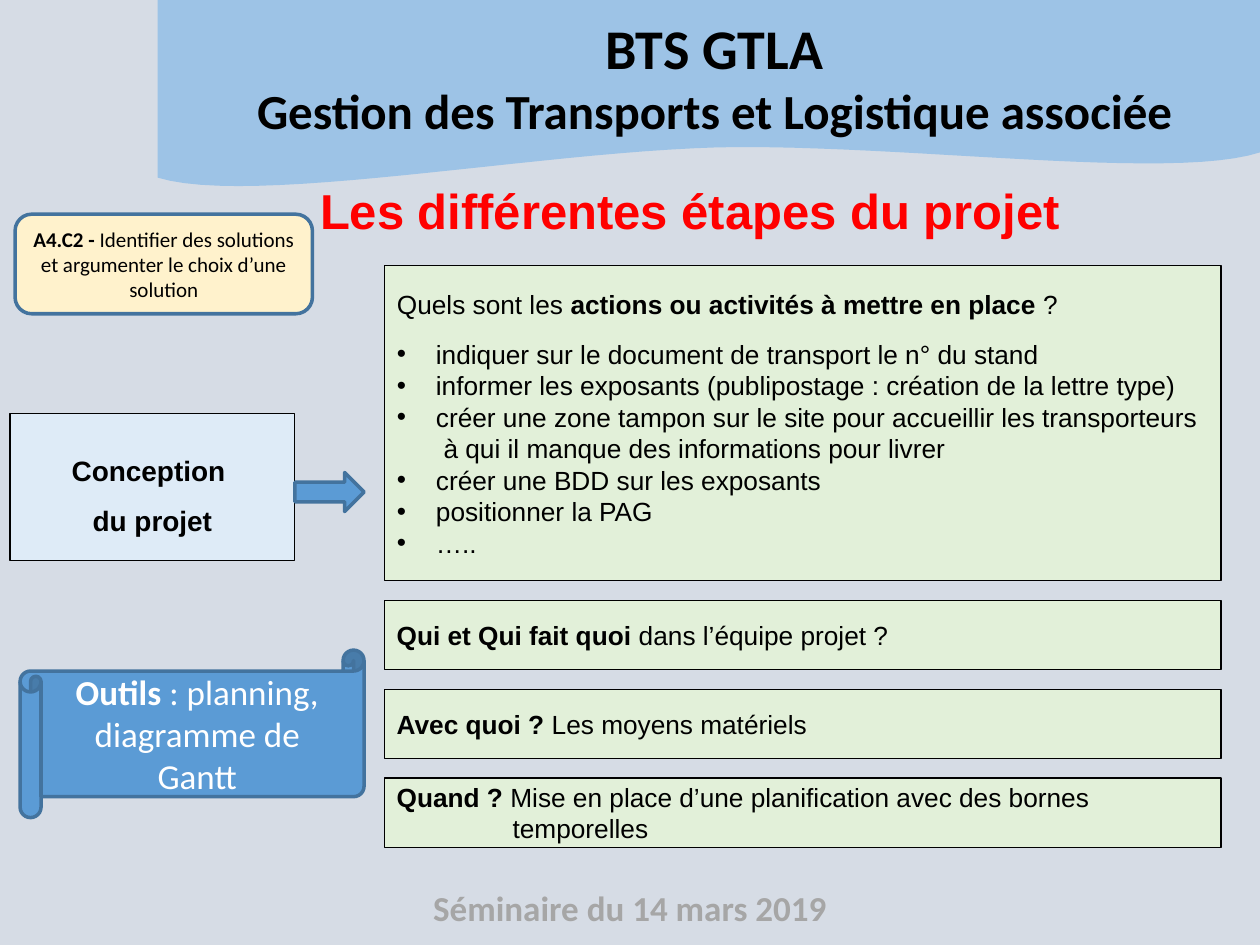
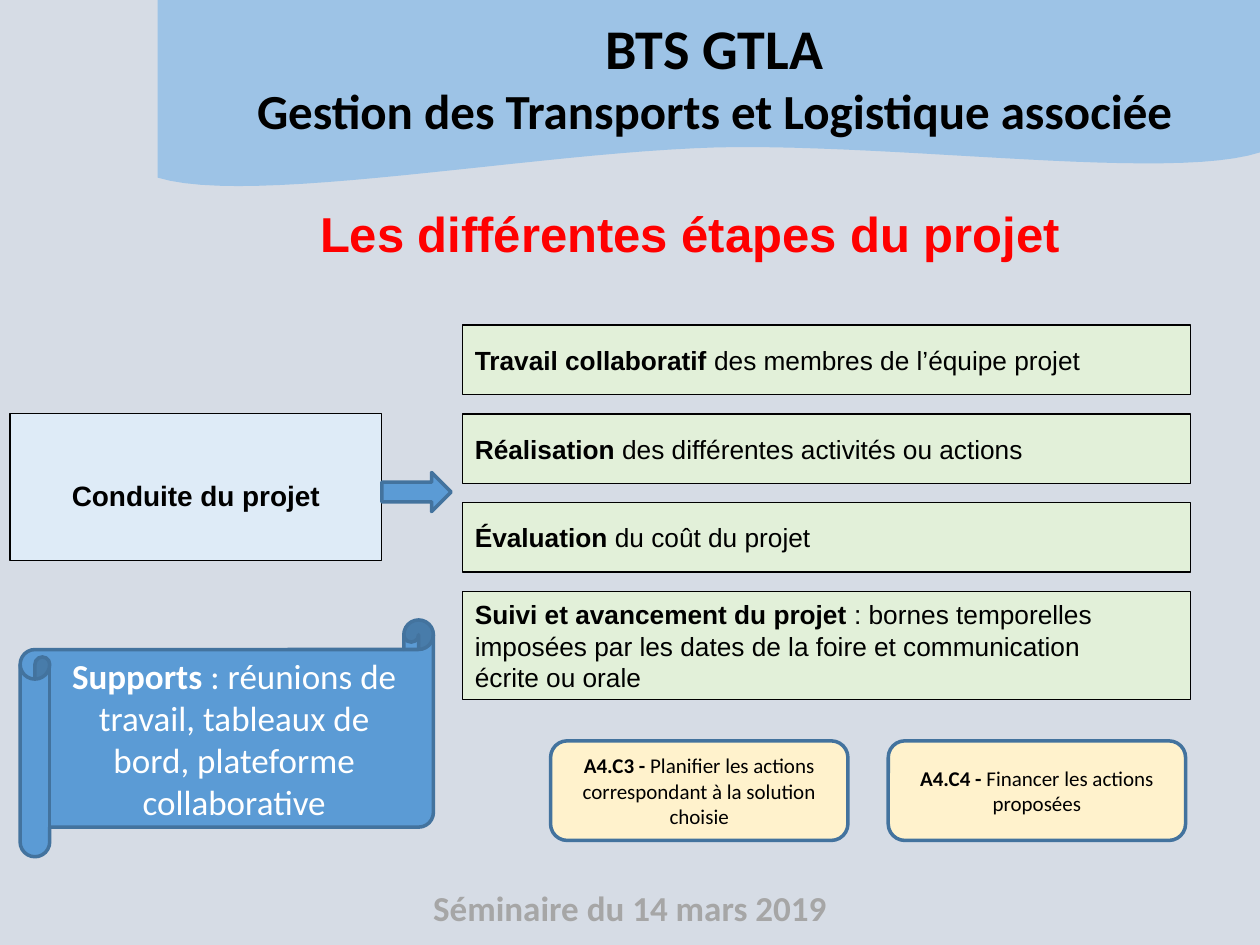
from lxml import etree
from pptx import Presentation
from pptx import util as u
from pptx.dml.color import RGBColor
from pptx.enum import shapes, text
from pptx.oxml.ns import qn

UNIT = u.Inches(0.1)  # grid cell: 100 columns by 75 rows
COLS, ROWS = 100, 75
GAP = 1.55
BLUE, EDGE = "5B9BD5", "43739E"
GREEN, PALE, CREAM = "E2F0D9", "DEEBF7", "FFF2CC"
BAND, BACK, GREY = "9DC3E6", "D6DCE5", "A6A6A6"
KIND = shapes.MSO_SHAPE
ALIGN = text.PP_ALIGN


def hue(code):
    return RGBColor.from_string(code)


def cells(*nums):
    return [round(n * UNIT) for n in nums]


def curve(start, one, two, end, steps=24):
    """Points along a cubic curve, without its start."""
    for i in range(1, steps + 1):
        t = i / steps
        s = 1 - t
        yield tuple(
            s**3 * a + 3 * s * s * t * b + 3 * s * t * t * c + t**3 * d
            for a, b, c, d in zip(start, one, two, end))


def mark(para, bullet, left):
    """Set the bullet and the left edge (in columns) of a paragraph."""
    props = para._p.get_or_add_pPr()
    edge = cells(left)[0]
    props.set("marL", str(edge))
    props.set("indent", str(-edge if bullet else 0))
    if bullet:
        etree.SubElement(props, qn("a:buFont"), typeface="Arial")
        etree.SubElement(props, qn("a:buChar"), char="•")
    else:
        etree.SubElement(props, qn("a:buNone"))


def write(shape, paras, size=15, font="Arial", color="000000", bold=False,
          align=ALIGN.LEFT, lead=1.0, anchor=text.MSO_ANCHOR.MIDDLE):
    """Fill a shape; *stars* hold bold words, a pair adds paragraph options."""
    frame = shape.text_frame
    frame.word_wrap = True
    frame.auto_size = text.MSO_AUTO_SIZE.NONE
    frame.vertical_anchor = anchor
    for i, item in enumerate(paras):
        words, opts = (item, {}) if isinstance(item, str) else item
        para = frame.add_paragraph() if i else frame.paragraphs[0]
        mark(para, opts.get("bullet", False), opts.get("left", 0))
        para.alignment = align
        para.line_spacing = lead
        para.space_before = u.Pt(opts.get("before", 0))
        for j, part in enumerate(words.split("*")):
            if part:
                run = para.add_run()
                run.text = part
                run.font.size = u.Pt(opts.get("size", size))
                run.font.name = font
                run.font.bold = bold or j % 2 == 1
                run.font.color.rgb = hue(color)


class Deck:
    def __init__(self):
        self.prs = Presentation()
        self.prs.slide_width, self.prs.slide_height = cells(COLS, ROWS)

    def page(self, layout, title, top):
        self.slide = self.prs.slides.add_slide(self.prs.slide_layouts[layout])
        fill = self.slide.background.fill
        fill.solid()
        fill.fore_color.rgb = hue(BACK)
        self.wave()
        self.label(18.8, 0.6, 75.8, 11.7, [
            ("BTS GTLA", {"size": 32}),
            "Gestion des Transports et Logistique associée"], size=28)
        self.label(25, 69.9, 50, 4.4, ["Séminaire du 14 mars 2019"],
                   size=20, color=GREY)
        head = self.slide.shapes.title
        self.move(head, 22.7, top, 64.1, 5.7)
        write(head, [title], size=28, color="FF0000", bold=True,
              align=ALIGN.CENTER)
        head.element.getparent().append(head.element)

    def move(self, shape, *box):
        shape.left, shape.top, shape.width, shape.height = cells(*box)

    def paint(self, shape, fill, line=None, width=2):
        shape.fill.solid()
        shape.fill.fore_color.rgb = hue(fill)
        if line:
            shape.line.color.rgb = hue(line)
            shape.line.width = u.Pt(width)
        else:
            shape.line.fill.background()

    def wave(self):
        """Draw the header band with its wavy lower edge."""
        mid, low = (57, 11.7), (12.5, 14.1)
        right = (COLS, 12.1)
        edge = [(COLS, 0), right,
                *curve(right, (92.9, 14.4), (71.6, 11.4), mid),
                *curve(mid, (42.4, 12.1), (19.9, 16.4), low)]
        pen = self.slide.shapes.build_freeform(*cells(12.5, 0), scale=1.0)
        pen.add_line_segments([cells(*spot) for spot in edge], close=True)
        band = pen.convert_to_shape()
        band.shadow.inherit = False
        self.paint(band, BAND)

    def label(self, x, y, w, h, paras, **style):
        box = self.slide.shapes.add_textbox(*cells(x, y, w, h))
        write(box, paras, font="Calibri", bold=True, align=ALIGN.CENTER,
              anchor=text.MSO_ANCHOR.TOP, **style)

    def shape(self, kind, x, y, w, h, fill, line=EDGE, width=2):
        item = self.slide.shapes.add_shape(kind, *cells(x, y, w, h))
        item.shadow.inherit = False
        self.paint(item, fill, line, width)
        return item

    def phase(self, width, paras):
        """Draw the phase box and the arrow that leaves it."""
        box = self.shape(KIND.RECTANGLE, 0.8, 32.8, width, 11.7, PALE,
                         "000000", 0.75)
        write(box, paras, size=16, bold=True, align=ALIGN.CENTER, lead=1.5)
        self.shape(KIND.RIGHT_ARROW, 0.8 + width, 37.5, 5.5, 3.1, BLUE)

    def list(self, x, y, w, h, paras):
        body = self.slide.placeholders[1]
        self.move(body, x, y, w, h)
        self.paint(body, GREEN, "000000", 0.75)
        write(body, paras)

    def stack(self, x, y, w, rows):
        """Pile up green boxes, each given as a height and paragraphs."""
        for h, paras in rows:
            box = self.shape(KIND.RECTANGLE, x, y, w, h, GREEN,
                             "000000", 0.75)
            write(box, paras)
            y += h + GAP

    def scroll(self, y, w, h, words):
        item = self.shape(KIND.HORIZONTAL_SCROLL, 1.6, y, w, h, BLUE)
        write(item, [words], size=20, font="Calibri", color="FFFFFF",
              align=ALIGN.CENTER)

    def skill(self, x, y, words):
        chip = self.shape(KIND.ROUNDED_RECTANGLE, x, y, 23.6, 7.9, CREAM)
        write(chip, [words], size=12, font="Calibri", align=ALIGN.CENTER)


def main():
    deck = Deck()
    title = "Les différentes étapes du projet"
    dot = {"bullet": True, "left": 3.1}

    deck.page(1, title, 13.8)
    deck.phase(22.6, ["Conception ", "du projet"])
    deck.list(30.5, 21.1, 66.4, 25, [
        "Quels sont les *actions ou activités à mettre en place *?",
        ("indiquer sur le document de transport le n° du stand",
         {**dot, "before": 10.5}),
        ("informer les exposants (publipostage : création de la lettre type)",
         dot),
        ("créer une zone tampon sur le site pour accueillir les transporteurs",
         dot),
        ("à qui il manque des informations pour livrer", {"left": 3.7}),
        ("créer une BDD sur les exposants", dot),
        ("positionner la PAG", dot),
        ("…..", dot)])
    deck.stack(30.5, 21.1 + 25 + GAP, 66.4, [
        (5.5, ["*Qui et Qui fait quoi *dans l’équipe projet ?"]),
        (5.5, ["*Avec quoi ? *Les moyens matériels"]),
        (5.5, ["*Quand ? *Mise en place d’une planification avec des bornes",
               ("temporelles", {"left": 9.2})])])
    deck.scroll(51.6, 27.3, 13.3, "*Outils *: planning, diagramme de Gantt")
    deck.skill(1.2, 17, "*A4.C2 - *Identifier des solutions et argumenter "
                        "le choix d’une solution")

    deck.page(5, title, 15.6)
    deck.phase(29.5, ["Conduite du projet"])
    deck.stack(36.7, 25.8, 57.8, [
        (5.5, ["*Travail collaboratif *des membres de l’équipe projet"]),
        (5.5, ["*Réalisation* des différentes activités ou actions"]),
        (5.5, ["*Évaluation *du coût du projet"]),
        (8.6, ["*Suivi et avancement du projet *: bornes temporelles",
               "imposées par les dates de la foire et communication",
               "écrite ou orale"])])
    deck.scroll(49.2, 32.8, 18.8, "*Supports *: réunions de travail, "
                                  "tableaux de bord, plateforme collaborative")
    deck.skill(43.7, 58.8, "*A4.C3 - *Planifier les actions correspondant "
                           "à la solution choisie")
    deck.skill(70.5, 58.8, "*A4.C4 - *Financer les actions proposées")

    deck.prs.save("out.pptx")


if __name__ == "__main__":
    main()
